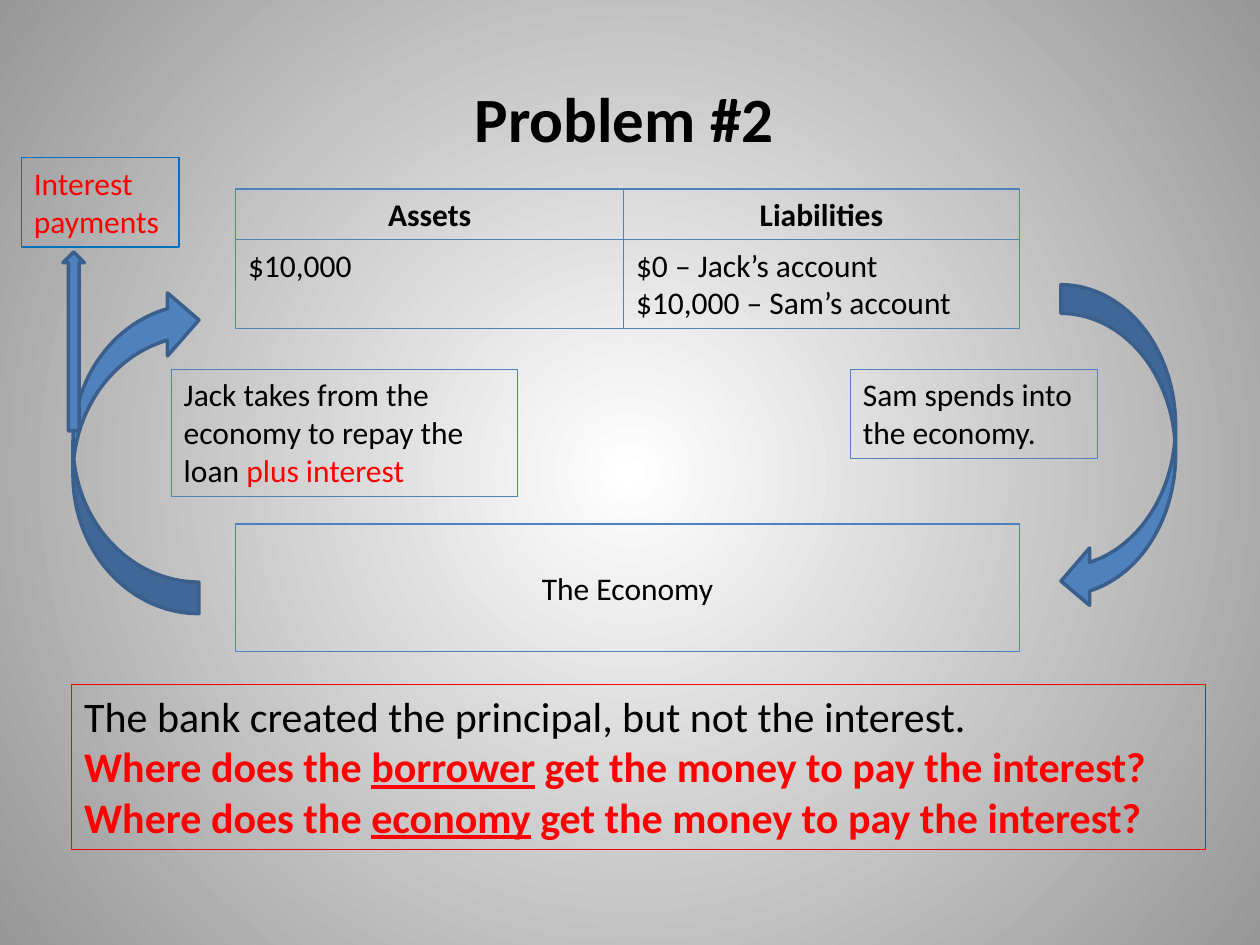
import pptx
import pptx.dml.color
import pptx.enum.shapes
import pptx.enum.text
import pptx.oxml
import pptx.oxml.ns
import pptx.util
import lxml.etree

COLORS = {"text": "000000", "alert": "FF0000", "accent": "4F81BD", "accent_dark": "3A5F8C",
          "payment": "0070C0", "glow": "FFFFFF", "edge": "979797"}
ALIGN = pptx.enum.text.PP_ALIGN
ANCHOR = pptx.enum.text.MSO_ANCHOR
SHAPE = pptx.enum.shapes.MSO_SHAPE


def rgb(name):
    return pptx.dml.color.RGBColor.from_string(COLORS[name])


def write(frame, paragraphs, size=18, align=ALIGN.LEFT, anchor=ANCHOR.TOP):
    """Fill a frame with paragraphs, each a list of (text, color, bold, underline) runs."""
    frame.word_wrap = True
    frame.auto_size = pptx.enum.text.MSO_AUTO_SIZE.NONE
    frame.vertical_anchor = anchor
    for index, runs in enumerate(paragraphs):
        paragraph = frame.paragraphs[0] if index == 0 else frame.add_paragraph()
        paragraph.alignment = align
        for text, color, bold, underline in runs:
            run = paragraph.add_run()
            run.text = text
            run.font.name = "Calibri"
            run.font.size = pptx.util.Pt(size)
            run.font.bold = bold
            run.font.underline = underline
            run.font.color.rgb = rgb(color)


deck = pptx.Presentation()
deck.slide_width = pptx.util.Inches(10)
deck.slide_height = pptx.util.Inches(7.5)
COL = deck.slide_width / 10
ROW = deck.slide_height / 7.5
slide = deck.slides.add_slide(deck.slide_layouts[5])

# Background: light in the centre, darker towards the corners
backdrop = slide.background.fill
backdrop.gradient()
for stop, color in zip(backdrop.gradient_stops, ("glow", "edge")):
    stop.color.rgb = rgb(color)
for stop, position in zip(backdrop.gradient_stops, (0, 1)):
    stop.position = position
gradient = slide.element.find(".//" + pptx.oxml.ns.qn("a:gradFill"))
gradient.remove(gradient.find(pptx.oxml.ns.qn("a:lin")))
radial = lxml.etree.SubElement(gradient, pptx.oxml.ns.qn("a:path"), {"path": "circle"})
lxml.etree.SubElement(radial, pptx.oxml.ns.qn("a:fillToRect"),
                      {side: "50000" for side in "ltrb"})

title = slide.shapes.title
title.left, title.top = int(2.58 * COL), int(0.58 * ROW)
title.width, title.height = int(4.75 * COL), int(0.71 * ROW)
write(title.text_frame, [[("Problem #2", "text", True, False)]], 36, ALIGN.CENTER)

# Balance sheet columns, and box heights for one, two and three lines
ASSETS, LIABILITIES, SHEET_END = 1.87, 4.95, 8.09
HEADER, ENTRIES, NOTES = 1.5, 1.9, 2.93
ONE_LINE, TWO_LINES, THREE_LINES = 0.4, 0.71, 1.01
assets_width, liabilities_width = LIABILITIES - ASSETS, SHEET_END - LIABILITIES


# Arrows: preset, left, top, width, height, flips
arrows = [
    (SHAPE.CURVED_LEFT_ARROW, 8.42, 2.26, 0.91, 2.58, ()),
    (SHAPE.CURVED_LEFT_ARROW, 0.58, 2.29, 1, 2.58, ("flipH", "flipV")),
    (SHAPE.DOWN_ARROW, 0.5, 2, 0.17, 1.42, ("flipV",)),
]
for preset, left, top, width, height, flips in arrows:
    arrow = slide.shapes.add_shape(preset, int(left * COL), int(top * ROW),
                                   int(width * COL), int(height * ROW))
    arrow.shadow.inherit = False
    arrow.fill.solid()
    arrow.fill.fore_color.rgb = rgb("accent")
    arrow.line.color.rgb = rgb("accent_dark")
    arrow.line.width = pptx.util.Pt(2)
    for flip in flips:
        arrow.element.spPr.xfrm.set(flip, "1")

# Boxes: left, top, width, height, line color, paragraphs, text options
centered = {"align": ALIGN.CENTER}
boxes = [
    (ASSETS, HEADER, assets_width, ONE_LINE, "accent",
     [[("Assets", "text", True, False)]], centered),
    (LIABILITIES, HEADER, liabilities_width, ONE_LINE, "accent",
     [[("Liabilities", "text", True, False)]], centered),
    (ASSETS, ENTRIES, assets_width, TWO_LINES, "accent",
     [[("$10,000", "text", False, False)]], {}),
    (LIABILITIES, ENTRIES, liabilities_width, TWO_LINES, "accent",
     [[("$0 – Jack’s account", "text", False, False)],
      [("$10,000 – Sam’s account", "text", False, False)]], {}),
    (ASSETS, 4.16, SHEET_END - ASSETS, THREE_LINES, "accent",
     [[("The Economy", "text", False, False)]], {**centered, "anchor": ANCHOR.MIDDLE}),
    (6.75, NOTES, 1.96, TWO_LINES, "accent",
     [[("Sam spends into the economy.", "text", False, False)]], {}),
    (1.36, NOTES, 2.75, THREE_LINES, "accent",
     [[("Jack takes from the economy to repay the loan ", "text", False, False),
       ("plus interest", "alert", False, False)]], {}),
    (0.57, 5.43, 9, 1.31, "alert",
     [[("The bank created the principal, but not the interest.", "text", False, False)],
      [("Where does the ", "alert", True, False),
       ("borrower", "alert", True, True),
       (" get the money to pay the interest? Where does the ", "alert", True, False),
       ("economy", "alert", True, True),
       (" get the money to pay the interest?", "alert", True, False)]], {"size": 24}),
    (0.17, 1.25, 1.25, TWO_LINES, "payment",
     [[("Interest payments", "alert", False, False)]], {}),
]
for left, top, width, height, outline, paragraphs, options in boxes:
    box = slide.shapes.add_textbox(int(left * COL), int(top * ROW),
                                   int(width * COL), int(height * ROW))
    box.line.color.rgb = rgb(outline)
    box.line.width = pptx.util.Pt(0.75)
    write(box.text_frame, paragraphs, **options)

deck.save("out.pptx")
